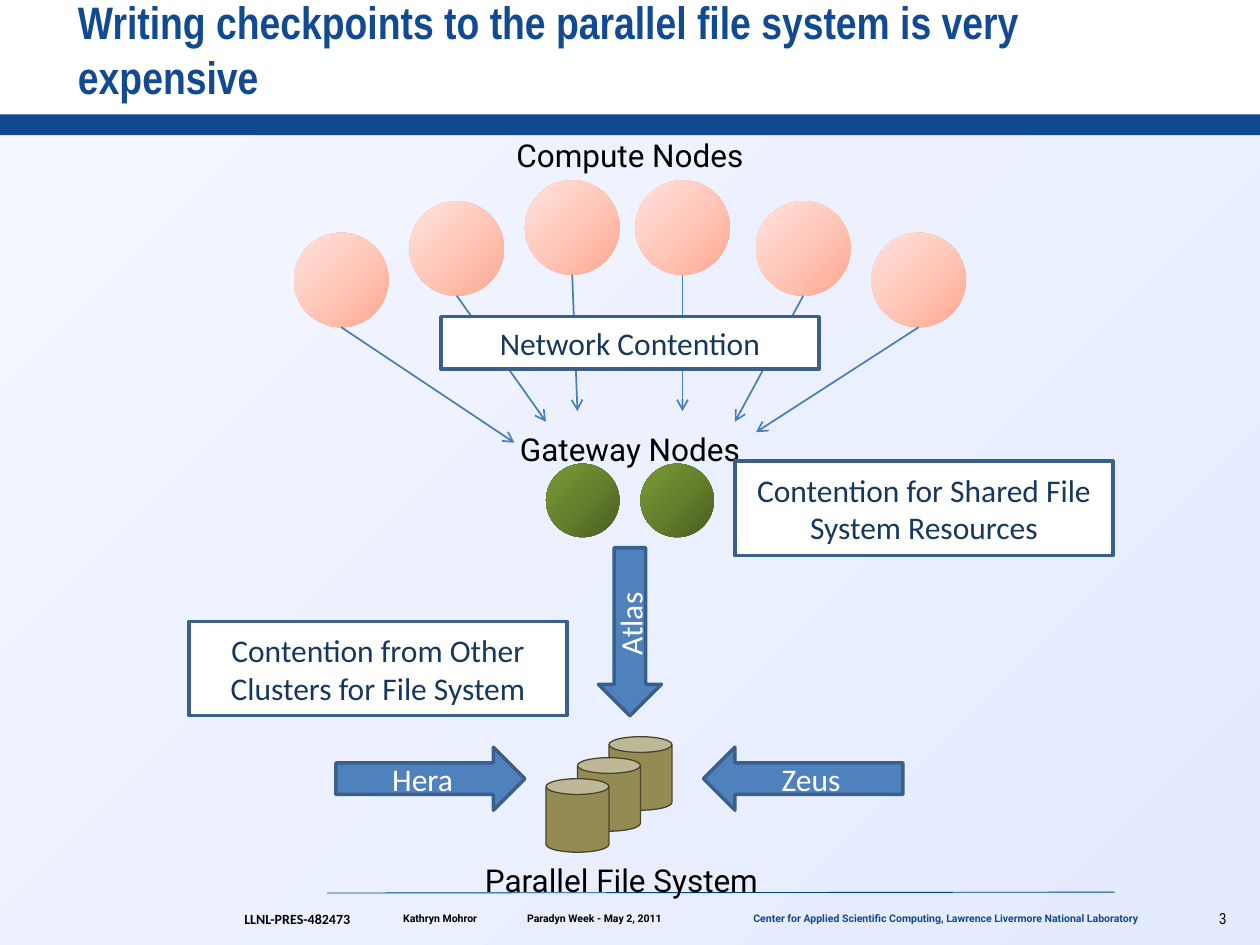
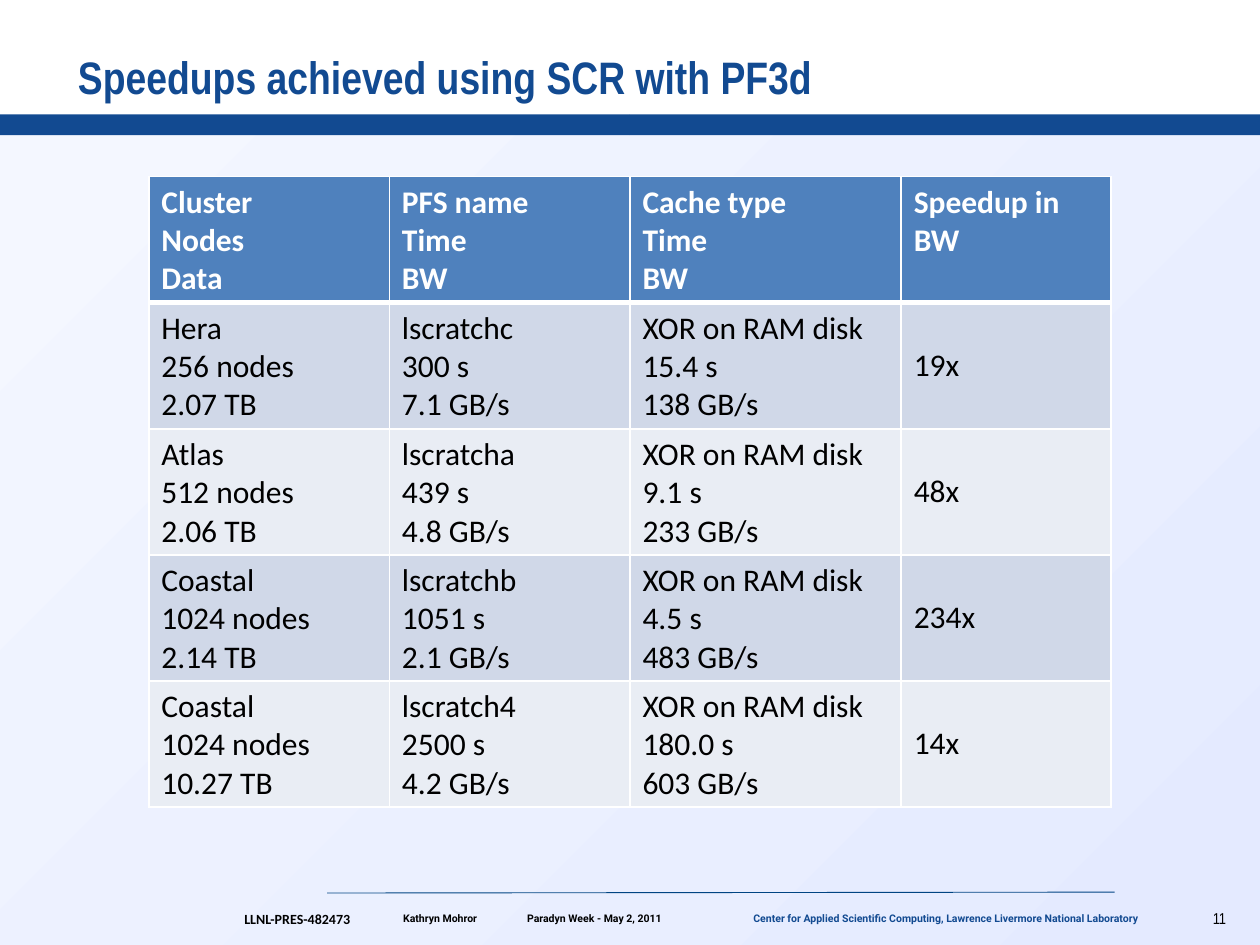
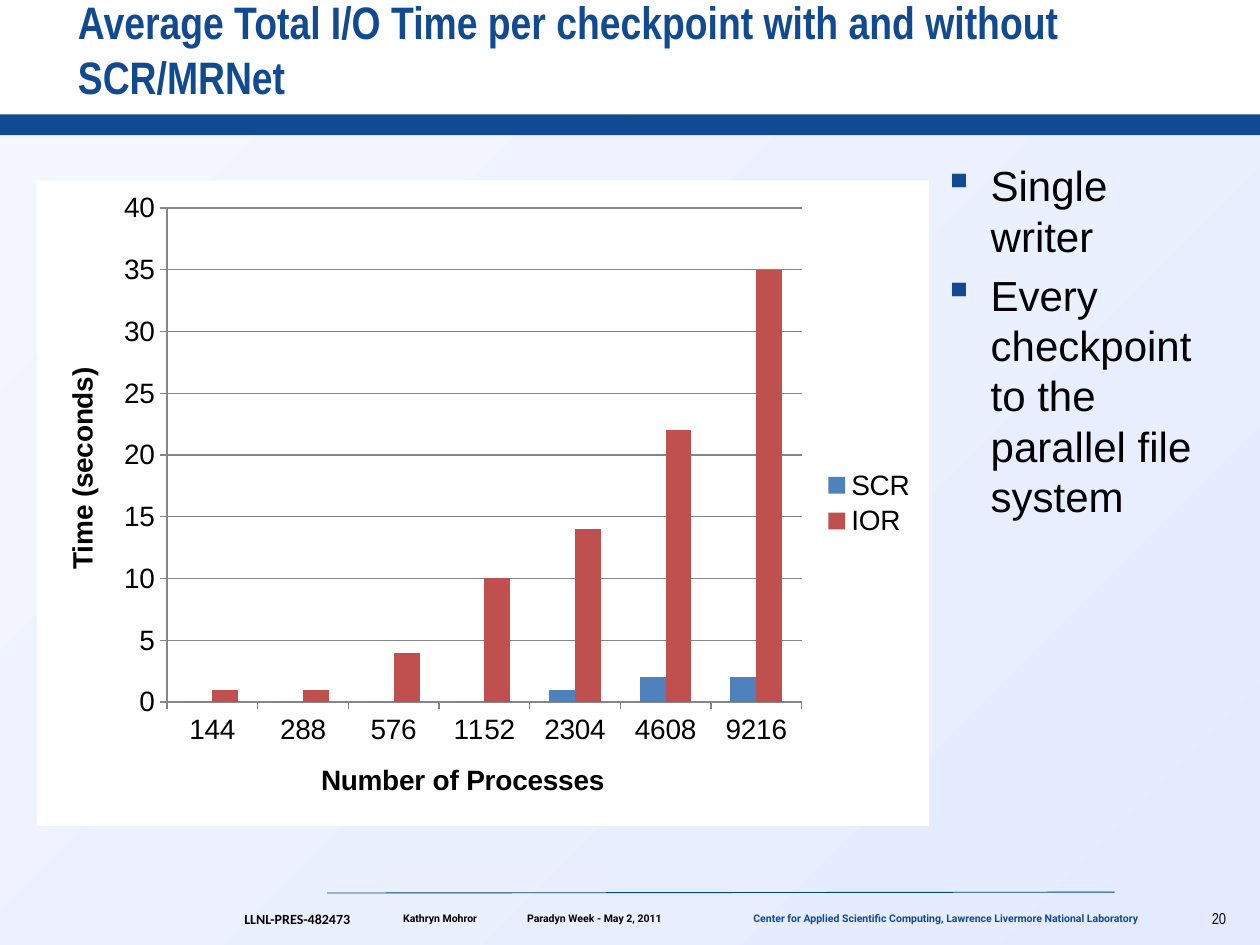
from copy import deepcopy

from lxml.etree import SubElement
from pptx import Presentation
from pptx.chart.data import CategoryChartData
from pptx.dml.color import RGBColor
from pptx.enum.chart import XL_CHART_TYPE as ChartType
from pptx.enum.chart import XL_LEGEND_POSITION as LegendPosition
from pptx.enum.chart import XL_TICK_MARK as TickMark
from pptx.enum.shapes import MSO_CONNECTOR as Connector
from pptx.enum.shapes import MSO_SHAPE as Shape
from pptx.enum.text import MSO_ANCHOR as Anchor
from pptx.enum.text import MSO_AUTO_SIZE as AutoSize
from pptx.enum.text import PP_ALIGN as Align
from pptx.oxml import parse_xml
from pptx.oxml.ns import nsdecls, qn
from pptx.util import Pt

# Colours
BLACK = RGBColor(0x00, 0x00, 0x00)
WHITE = RGBColor(0xFF, 0xFF, 0xFF)
BRAND_BLUE = RGBColor(0x12, 0x4A, 0x91)
RULE_BLUE = RGBColor(0x00, 0x44, 0x83)
ACCENT_BLUE = RGBColor(0x4F, 0x81, 0xBD)
EDGE_BLUE = RGBColor(0x3A, 0x5F, 0x8C)
ARROW_BLUE = RGBColor(0x4B, 0x7E, 0xBC)
NOTE_BLUE = RGBColor(0x17, 0x37, 0x5E)
BAR_RED = RGBColor(0xC0, 0x50, 0x4D)
GRID_GRAY = RGBColor(0x86, 0x86, 0x86)
DISK_TAN = RGBColor(0x94, 0x8A, 0x54)
DISK_EDGE = RGBColor(0x4A, 0x45, 0x2A)
ROW_FILLS = [RGBColor(0xD0, 0xD8, 0xE8), RGBColor(0xE9, 0xED, 0xF4)]
BACKDROP = [RGBColor(0xF4, 0xF7, 0xFF), RGBColor(0xE4, 0xEA, 0xFF)]
COMPUTE = [RGBColor(0xFF, 0xA7, 0x8E), RGBColor(0xFF, 0xC8, 0xBA),
           RGBColor(0xFF, 0xE3, 0xDD)]
GATEWAY = [RGBColor(0x48, 0x5B, 0x20), RGBColor(0x66, 0x81, 0x2D),
           RGBColor(0x79, 0x99, 0x36)]

NODE_SIZE, GATEWAY_SIZE = 54, 42
INSETS = (7.2, 3.6, 7.2, 3.6)
FLUSH_INSETS = (0, 3.6, 7.2, 3.6)

# Left, top of each compute node and the tip of its arrow
NODES = [
    (168, 133, 294, 253), (234, 115, 312, 241), (300, 103, 330, 235),
    (363, 103, 390, 235), (432, 115, 420, 241), (498, 133, 432, 247),
]

SPEEDUPS = [
    ("Cluster\nNodes\nData", "PFS name\nTime\nBW", "Cache type\nTime\nBW", "Speedup in BW"),
    ("Hera\n256 nodes\n2.07 TB", "lscratchc\n300 s\n7.1 GB/s",
     "XOR on RAM disk\n15.4 s\n138 GB/s", "19x"),
    ("Atlas\n512 nodes\n2.06 TB", "lscratcha\n439 s\n4.8 GB/s",
     "XOR on RAM disk\n9.1 s\n233 GB/s", "48x"),
    ("Coastal\n1024 nodes\n2.14 TB", "lscratchb\n1051 s\n2.1 GB/s",
     "XOR on RAM disk\n4.5 s\n483 GB/s", "234x"),
    ("Coastal\n1024 nodes\n10.27 TB", "lscratch4\n2500 s\n4.2 GB/s",
     "XOR on RAM disk\n180.0 s\n603 GB/s", "14x"),
]

PROCESSES = ["144", "288", "576", "1152", "2304", "4608", "9216"]
IO_TIMES = [
    ("SCR", (0, 0, 0, 0, 1, 2, 2), ACCENT_BLUE),
    ("IOR", (1, 1, 4, 10, 14, 22, 35), BAR_RED),
]


# Text
def write_text(frame, text, *, size=18, font="Calibri", color=BLACK, bold=False,
               align=Align.LEFT, spacing=None, before=0, bullet=None, tab=None):
    """Fill a text frame, one paragraph for each line of text."""
    for index, line in enumerate(text.split("\n")):
        para = frame.paragraphs[0] if index == 0 else frame.add_paragraph()
        para.alignment = align
        if spacing:
            para.line_spacing = spacing
        if index and before:
            para.space_before = Pt(before)
        props = para._p.get_or_add_pPr()
        if bullet:
            props.set("marL", str(Pt(27)))
            props.set("indent", str(Pt(-27)))
            tint = SubElement(props, qn("a:buClr"))
            SubElement(tint, qn("a:srgbClr")).set("val", str(BRAND_BLUE))
            SubElement(props, qn("a:buChar")).set("char", bullet)
        if tab:
            stops = SubElement(props, qn("a:tabLst"))
            stop = SubElement(stops, qn("a:tab"))
            stop.set("pos", str(Pt(tab)))
            stop.set("algn", "l")
        span = para.add_run()
        span.text = line
        span.font.size = Pt(size)
        span.font.name = font
        span.font.bold = bold
        span.font.color.rgb = color


def set_frame(frame, insets=INSETS, anchor=Anchor.TOP, wrap=True):
    frame.word_wrap = wrap
    frame.vertical_anchor = anchor
    (frame.margin_left, frame.margin_top,
     frame.margin_right, frame.margin_bottom) = map(Pt, insets)


def add_text(page, text, left, top, width, height, *, insets=INSETS,
             anchor=Anchor.TOP, wrap=True, grow=False, **style):
    box = page.shapes.add_textbox(Pt(left), Pt(top), Pt(width), Pt(height))
    set_frame(box.text_frame, insets, anchor, wrap)
    if grow:
        box.text_frame.auto_size = AutoSize.SHAPE_TO_FIT_TEXT
    write_text(box.text_frame, text, **style)


# Shapes
def add_block(page, kind, left, top, width, height, *, fill, edge=None, weight=2):
    block = page.shapes.add_shape(kind, Pt(left), Pt(top), Pt(width), Pt(height))
    block.shadow.inherit = False
    block.fill.solid()
    block.fill.fore_color.rgb = fill
    if edge:
        block.line.color.rgb = edge
        block.line.width = Pt(weight)
    else:
        block.line.fill.background()
    return block


def add_gradient(page, kind, left, top, width, height, colors, angle):
    """Add a shape with evenly spaced gradient stops; angle runs clockwise."""
    block = add_block(page, kind, left, top, width, height, fill=colors[0])
    block.fill.gradient()
    block.fill.gradient_angle = 360 - angle
    stop_list = block._element.spPr.find(".//" + qn("a:gsLst"))
    for _ in colors[2:]:
        stop_list.append(deepcopy(stop_list[0]))
    for index, (stop, color) in enumerate(zip(block.fill.gradient_stops, colors)):
        stop.position = index / (len(colors) - 1)
        stop.color.rgb = color


def add_captioned(page, kind, text, left, top, width, height, *, fill, color,
                  vertical=None):
    block = add_block(page, kind, left, top, width, height, fill=fill, edge=EDGE_BLUE)
    set_frame(block.text_frame, anchor=Anchor.MIDDLE)
    if vertical:
        block.text_frame._txBody.bodyPr.set("vert", vertical)
    write_text(block.text_frame, text, color=color, align=Align.CENTER)


def add_line(page, start, end, color, weight, arrow=False):
    line = page.shapes.add_connector(Connector.STRAIGHT, *map(Pt, start + end))
    line.line.color.rgb = color
    line.line.width = Pt(weight)
    if arrow:
        SubElement(line.line._get_or_add_ln(), qn("a:tailEnd")).set("type", "arrow")
    SubElement(line._element.spPr, qn("a:effectLst"))


# Shared frame: backdrop, band, footer and title
def add_page(deck, title, number):
    page = deck.slides.add_slide(deck.slide_layouts[6])
    add_gradient(page, Shape.RECTANGLE, 0, 75.6, 720, 464.4, BACKDROP, 45)
    for left in (0, 360):
        add_block(page, Shape.RECTANGLE, left, 65.3, 360, 12, fill=BRAND_BLUE)
    add_line(page, (187, 510.3), (637, 509.8), RULE_BLUE, 0.5)
    add_text(page, str(number), 683.3, 518.4, 24.5, 15, insets=FLUSH_INSETS, grow=True,
             size=9, font="Arial Narrow", align=Align.RIGHT, spacing=0.75)
    add_text(page, "LLNL-PRES-482473", 132.5, 517, 75.6, 17.3, wrap=False, grow=True,
             size=8, bold=True)
    add_text(page, "Center for Applied Scientific Computing, "
             "Lawrence Livermore National Laboratory", 423.4, 517.7, 250.6, 14.4,
             wrap=False, grow=True, size=6, font="Roboto", color=BRAND_BLUE, bold=True)
    add_text(page, "Kathryn Mohror\tParadyn Week - May 2, 2011", 216, 517.7, 184.3, 14.4,
             insets=(14.4, 3.6, 7.2, 3.6), grow=True, size=6, font="Roboto",
             bold=True, tab=70.8)
    add_text(page, title, 44.6, 11.5, 592, 51.1, insets=FLUSH_INSETS,
             anchor=Anchor.BOTTOM, size=26, font="Arial Narrow", color=BRAND_BLUE,
             bold=True)
    return page


# Checkpoint diagram
def draw_contention(page):
    for step in range(3):
        add_block(page, Shape.CAN, 348 - 18 * step, 421 + 12 * step, 36, 42,
                  fill=DISK_TAN, edge=DISK_EDGE, weight=0.75)
    add_text(page, "Parallel File System", 270, 488.2, 180, 29, font="Roboto")

    clusters = {"fill": ACCENT_BLUE, "color": WHITE}
    add_captioned(page, Shape.RIGHT_ARROW, "Hera", 192, 427, 108, 36, **clusters)
    add_captioned(page, Shape.DOWN_ARROW, "Atlas", 342, 313, 36, 96,
                  vertical="vert270", **clusters)
    add_captioned(page, Shape.LEFT_ARROW, "Zeus", 402, 427, 114, 36, **clusters)

    for text, top in (("Gateway Nodes", 242), ("Compute Nodes", 74)):
        add_text(page, text, 282, top, 156, 29, font="Roboto", align=Align.CENTER)
    for left in (312, 366):
        add_gradient(page, Shape.OVAL, left, 265, GATEWAY_SIZE, GATEWAY_SIZE, GATEWAY, 225)
    for left, top, tip_x, tip_y in NODES:
        add_gradient(page, Shape.OVAL, left, top, NODE_SIZE, NODE_SIZE, COMPUTE, 225)
        add_line(page, (left + NODE_SIZE / 2, top + NODE_SIZE), (tip_x, tip_y),
                 ARROW_BLUE, 1, arrow=True)

    for text, left, top, height in (
        ("Network Contention", 252, 181, 30),
        ("Contention for Shared File System Resources", 420, 263.5, 54),
        ("Contention from Other Clusters for File System", 108, 355, 54),
    ):
        add_captioned(page, Shape.RECTANGLE, text, left, top, 216, height,
                      fill=WHITE, color=NOTE_BLUE)


# Speedup table
def set_borders(cell, top, bottom):
    props = cell._tc.get_or_add_tcPr()
    sides = (("a:lnL", 1), ("a:lnR", 1), ("a:lnT", top), ("a:lnB", bottom))
    for index, (side, weight) in enumerate(sides):
        props.insert(index, parse_xml(
            f'<{side} {nsdecls("a")} w="{Pt(weight)}"><a:solidFill>'
            f'<a:srgbClr val="{WHITE}"/></a:solidFill></{side}>'))


def add_speedup_table(page):
    widths = (137.5, 137.5, 155, 120)
    table = page.shapes.add_table(len(SPEEDUPS), len(widths), Pt(85), Pt(101),
                                  Pt(sum(widths)), Pt(360)).table
    for column, width in zip(table.columns, widths):
        column.width = Pt(width)
    for row, texts in enumerate(SPEEDUPS):
        header = row == 0
        for col, text in enumerate(texts):
            cell = table.cell(row, col)
            cell.fill.solid()
            cell.fill.fore_color.rgb = ACCENT_BLUE if header else ROW_FILLS[(row - 1) % 2]
            if col == len(widths) - 1 and not header:
                cell.vertical_anchor = Anchor.MIDDLE
            set_borders(cell, top=3 if row == 1 else 1, bottom=3 if header else 1)
            write_text(cell.text_frame, text, bold=header,
                       color=WHITE if header else BLACK)


# I/O time chart
def style_axis(axis, title):
    write_text(axis.axis_title.text_frame, title, size=16, font="Arial", bold=True)
    axis.major_tick_mark = TickMark.OUTSIDE
    axis.minor_tick_mark = TickMark.NONE
    axis.format.line.color.rgb = GRID_GRAY
    axis.tick_labels.font.size = Pt(16)


def add_time_chart(page):
    data = CategoryChartData()
    data.categories = PROCESSES
    for name, times, _ in IO_TIMES:
        data.add_series(name, times)
    chart = page.shapes.add_chart(ChartType.COLUMN_CLUSTERED, Pt(21), Pt(103), Pt(510),
                                  Pt(369), data).chart
    chart.font.size = Pt(16)
    chart.font.name = "Arial"
    chart.font.color.rgb = BLACK
    chart.has_title = False
    chart.has_legend = True
    chart.legend.position = LegendPosition.RIGHT
    chart.legend.include_in_layout = False
    chart.legend.font.size = Pt(16)

    plot = chart.plots[0]
    plot.vary_by_categories = False
    plot.gap_width = 150
    plot.overlap = 0
    for series, (_, _, color) in zip(plot.series, IO_TIMES):
        series.format.fill.solid()
        series.format.fill.fore_color.rgb = color

    style_axis(chart.category_axis, "Number of Processes")
    times = chart.value_axis
    style_axis(times, "Time (seconds)")
    times.minimum_scale, times.maximum_scale, times.major_unit = 0, 40, 5
    times.has_major_gridlines = True
    times.major_gridlines.format.line.color.rgb = GRID_GRAY

    # Fixed plot area and white background
    area = chart._chartSpace.chart.plotArea
    for old in area.findall(qn("c:layout")):
        area.remove(old)
    layout = parse_xml(f'<c:layout {nsdecls("c")}><c:manualLayout/></c:layout>')
    for name, value in (("layoutTarget", "inner"), ("xMode", "edge"), ("yMode", "edge"),
                        ("x", 0.146), ("y", 0.043), ("w", 0.711), ("h", 0.765)):
        SubElement(layout[0], qn("c:" + name)).set("val", str(value))
    area.insert(0, layout)
    chart._chartSpace.chart.addnext(parse_xml(
        f'<c:spPr {nsdecls("c", "a")}><a:solidFill><a:srgbClr val="{WHITE}"/>'
        '</a:solidFill><a:ln><a:noFill/></a:ln></c:spPr>'))


def main():
    deck = Presentation()
    deck.slide_width, deck.slide_height = Pt(720), Pt(540)

    draw_contention(add_page(
        deck, "Writing checkpoints to the parallel file system is very expensive", 3))
    add_speedup_table(add_page(deck, "Speedups achieved using SCR with PF3d", 11))

    page = add_page(
        deck, "Average Total I/O Time per checkpoint with and without SCR/MRNet", 20)
    add_text(page, "Single writer\nEvery checkpoint to the parallel file system",
             532, 87.8, 167, 392.4, size=24, font="Arial", before=4.8, bullet="▪")
    add_time_chart(page)

    deck.save("out.pptx")


if __name__ == "__main__":
    main()
